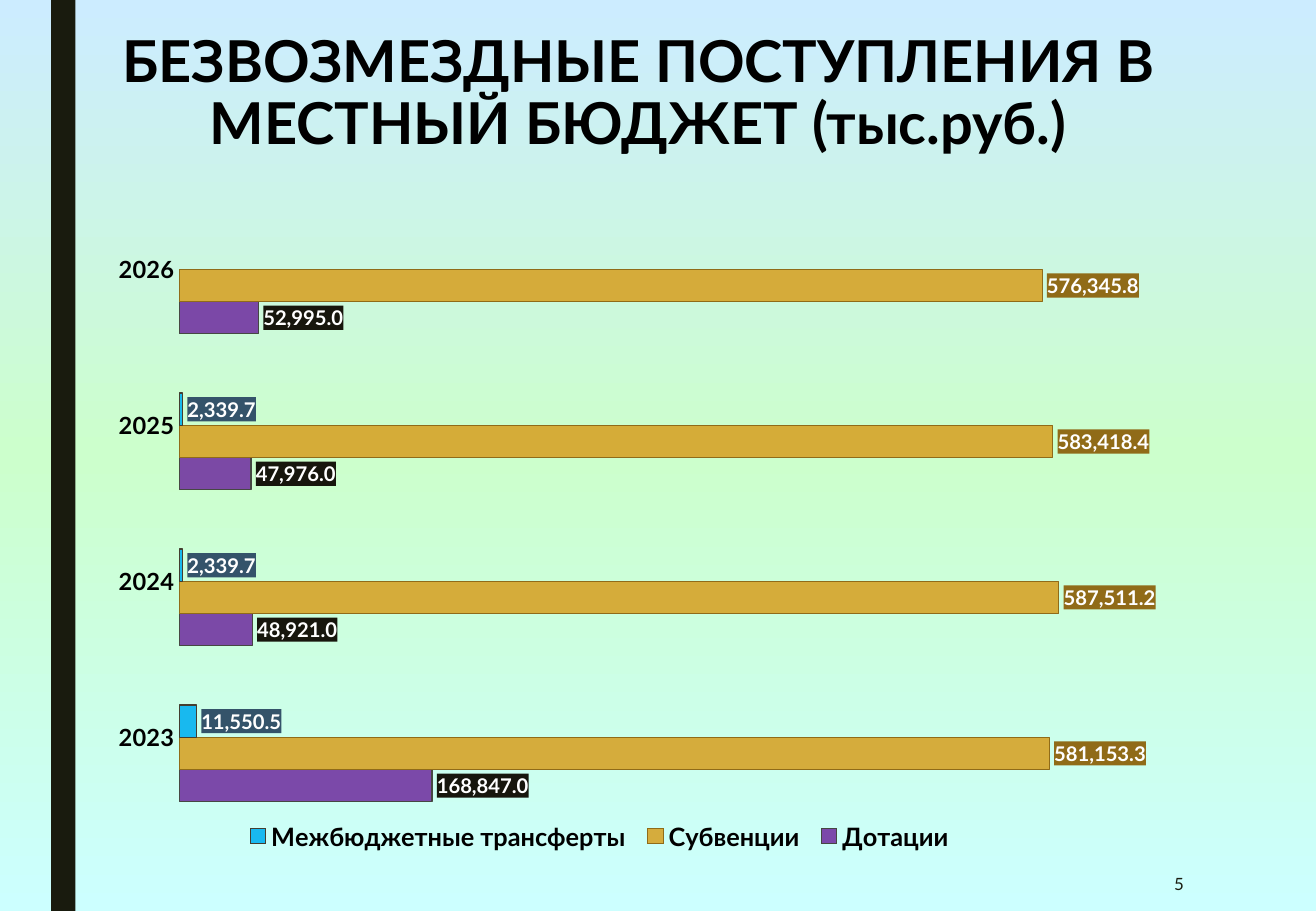
from lxml import etree
from pptx import Presentation, util as u
from pptx.chart.data import CategoryChartData
from pptx.dml.color import RGBColor
from pptx.enum import chart as ch, shapes, text as tx
from pptx.oxml import parse_xml
from pptx.oxml.ns import nsdecls, qn

# Content
TITLE = "БЕЗВОЗМЕЗДНЫЕ ПОСТУПЛЕНИЯ В МЕСТНЫЙ БЮДЖЕТ (тыс.руб.)"
PAGE = "5"
YEARS = ["2023", "2024", "2025", "2026"]
# name, values, fill, outline, label fill
SERIES = [
    ("Дотации", [168847, 48921, 47976, 52995], "7030A0", "464743", "17160D"),
    ("Субвенции", [581153.3, 587511.2, 583418.4, 576345.8], "D7A124", "906B18", "906B18"),
    ("Межбюджетные трансферты", [11550.5, 2339.7, 2339.7, None], "00B0F0", "443E30", "34536A"),
    ("Столбец1", [None] * 4, "8DAB8E", "425A43", "425A43"),
]


class Theme:
    font = "Lato"
    ink, dark, white = "000000", "191B0E", "FFFFFF"
    back = [(0, "CCECFF"), (50, "CCFFCC"), (100, "CCFFFF")]
    title, axis, legend, label, page = 34.2, 14, 15, 12, 10


def style(font, size, color=Theme.ink, bold=True):
    font.name, font.size, font.bold = Theme.font, u.Pt(size), bold
    font.color.rgb = RGBColor.from_string(color)


def write(frame, words, size, color=Theme.ink, bold=True, align=tx.PP_ALIGN.CENTER, lead=1.0):
    frame.word_wrap = True
    frame.auto_size = tx.MSO_AUTO_SIZE.NONE
    frame.vertical_anchor = tx.MSO_ANCHOR.MIDDLE
    para = frame.paragraphs[0]
    para.alignment, para.line_spacing = align, lead
    run = para.add_run()
    run.text = words
    style(run.font, size, color, bold)


def place(x, y, w, h):
    """Manual layout in fractions of the chart."""
    parts = "".join(f'<c:{k} val="{v}"/>' for k, v in
                    [("xMode", "edge"), ("yMode", "edge"), ("x", x), ("y", y), ("w", w), ("h", h)])
    return parse_xml(f'<c:layout {nsdecls("c")}><c:manualLayout>{parts}</c:manualLayout></c:layout>')


deck = Presentation()
deck.slide_width, deck.slide_height = u.Cm(27.51), u.Cm(19.05)
slide = deck.slides.add_slide(deck.slide_layouts[5])

# Background gradient
fill = slide.background.fill
fill.gradient()
fill.gradient_angle = 270
stops = slide.background._cSld.find(".//" + qn("a:gsLst"))
for old in list(stops):
    stops.remove(old)
for pos, color in Theme.back:
    stop = etree.SubElement(stops, qn("a:gs"), pos=str(pos * 1000))
    etree.SubElement(stop, qn("a:srgbClr"), val=color)

# Side stripe
stripe = slide.shapes.add_shape(shapes.MSO_SHAPE.RECTANGLE, u.Cm(1.07), 0, u.Cm(0.51), deck.slide_height)
stripe.shadow.inherit = False
stripe.fill.solid()
stripe.fill.fore_color.rgb = RGBColor.from_string(Theme.dark)
stripe.line.fill.background()

# Title
title = slide.shapes.title
title.left, title.top, title.width, title.height = map(u.Cm, (1.68, 0.53, 23.32, 2.92))
write(title.text_frame, TITLE, Theme.title, lead=0.89)

# Chart
data = CategoryChartData(number_format="#,##0.0")
data.categories = YEARS
for name, values, *_ in SERIES:
    data.add_series(name, values)
chart = slide.shapes.add_chart(ch.XL_CHART_TYPE.BAR_CLUSTERED, *map(u.Cm, (2.06, 3.71, 24.08, 14.66)), data).chart
style(chart.font, 10, bold=False)
chart.has_title = False
plot = chart.plots[0]
plot.gap_width, plot.overlap, plot.vary_by_categories = 84, 0, False
area = chart._chartSpace.chart.plotArea
for old in area.findall(qn("c:layout")):
    area.remove(old)
frame = place(0.07, 0.02, 0.91, 0.89)
etree.SubElement(frame[0], qn("c:layoutTarget"), val="inner")
frame[0].insert(0, frame[0][-1])
area.insert(0, frame)

# Axes
years, sums = chart.category_axis, chart.value_axis
years.major_tick_mark = ch.XL_TICK_MARK.NONE
years.format.line.fill.background()
style(years.tick_labels.font, Theme.axis)
sums.has_major_gridlines = sums.visible = False
sums.minimum_scale, sums.maximum_scale = 0, 700000

# Bars and their labels
for bar, (_, _, color, edge, tag) in zip(plot.series, SERIES):
    bar.format.fill.solid()
    bar.format.fill.fore_color.rgb = RGBColor.from_string(color)
    tone = bar._element.spPr.find(".//" + qn("a:srgbClr"))
    etree.SubElement(tone, qn("a:alpha"), val="88000")
    bar.format.line.color.rgb = RGBColor.from_string(edge)
    bar.format.line.width = u.Pt(0.75)
    labels = bar.data_labels
    labels.show_value = True
    labels.number_format, labels.number_format_is_linked = "#,##0.0", False
    labels.position = ch.XL_LABEL_POSITION.OUTSIDE_END
    style(labels.font, Theme.label, Theme.white)
    labels._element.find(qn("c:txPr")).addprevious(parse_xml(
        f'<c:spPr {nsdecls("c", "a")}><a:solidFill><a:srgbClr val="{tag}"/></a:solidFill></c:spPr>'))

# Legend without the empty series
chart.has_legend = True
legend = chart.legend
legend.position = ch.XL_LEGEND_POSITION.BOTTOM
legend.include_in_layout = False
style(legend.font, Theme.legend)
box = legend._element
for old in box.findall(qn("c:layout")):
    box.remove(old)
spot = box.find(qn("c:legendPos"))
spot.addnext(place(0.12, 0.91, 0.63, 0.06))
spot.addnext(parse_xml(f'<c:legendEntry {nsdecls("c")}><c:idx val="0"/><c:delete val="1"/></c:legendEntry>'))

# Page number
page = slide.shapes.add_textbox(*map(u.Cm, (21.39, 17.93, 3.61, 1.12)))
write(page.text_frame, PAGE, Theme.page, Theme.dark, bold=False, align=tx.PP_ALIGN.RIGHT)

deck.save("out.pptx")
